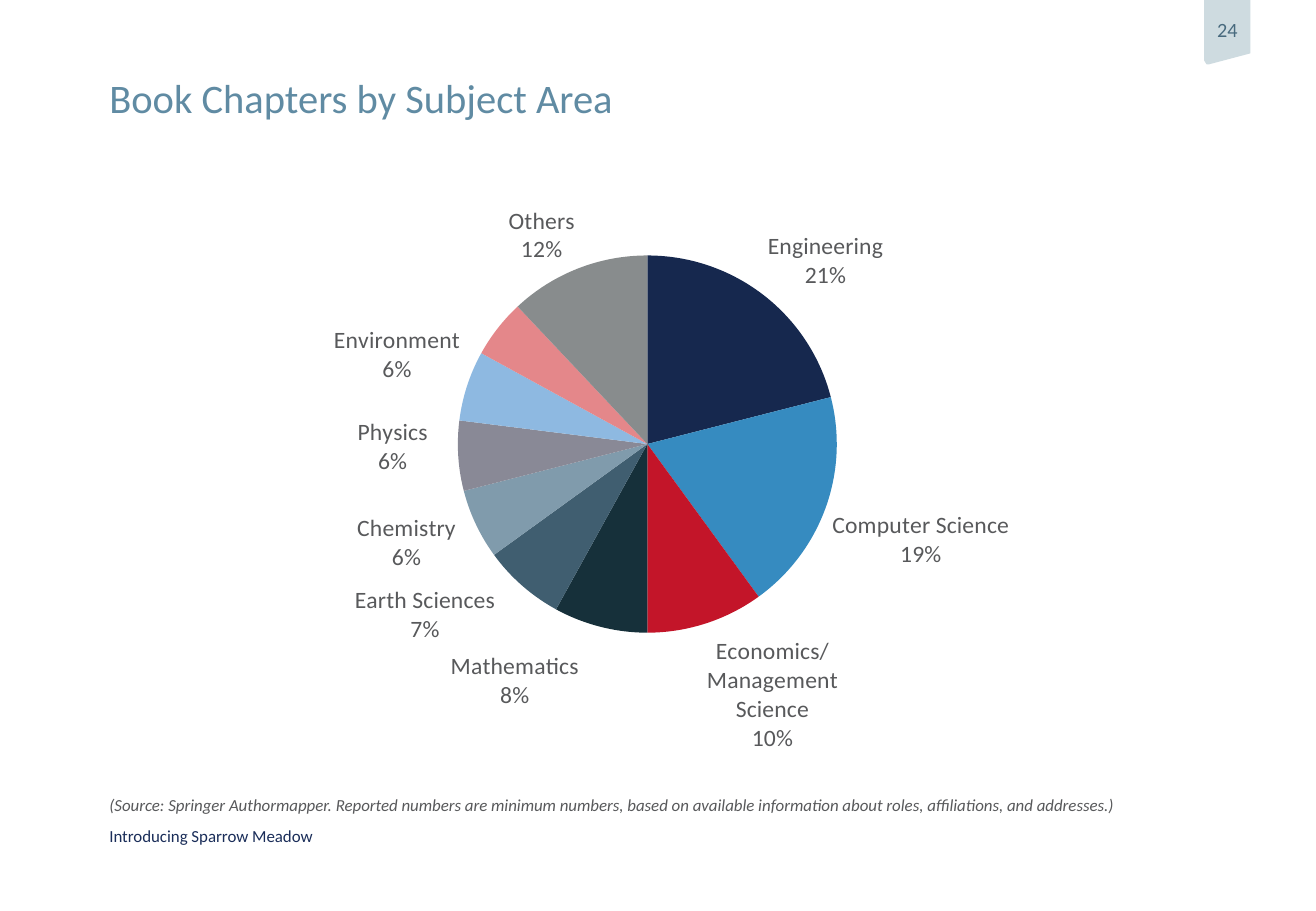
from dataclasses import dataclass

from lxml import etree
from pptx import Presentation
from pptx import util as u
from pptx.chart.chart import Chart
from pptx.chart.data import CategoryChartData
from pptx.dml.color import RGBColor
from pptx.enum import chart as chart_enum
from pptx.enum import text
from pptx.oxml import parse_xml
from pptx.oxml.ns import nsdecls
from pptx.shapes.autoshape import Shape
from pptx.slide import Slide

PX = u.Inches(1) // 100
FONT = "Calibri"
NAVY = RGBColor(0x1A, 0x2D, 0x59)
TITLE_BLUE = RGBColor(0x60, 0x8B, 0xA3)
TAB_BLUE = RGBColor(0xCE, 0xDB, 0xE0)
SLATE = RGBColor(0x48, 0x6A, 0x7E)
GREY = RGBColor(0x58, 0x59, 0x5B)


@dataclass(frozen=True)
class Box:
    left: int
    top: int
    width: int
    height: int

    def emu(self) -> tuple[int, int, int, int]:
        return self.left * PX, self.top * PX, self.width * PX, self.height * PX


@dataclass(frozen=True)
class TextStyle:
    size: int
    color: RGBColor
    italic: bool = False
    wrap: bool = True
    anchor: text.MSO_ANCHOR = text.MSO_ANCHOR.TOP
    align: text.PP_ALIGN = text.PP_ALIGN.LEFT
    bottom_inset: int = 0


@dataclass(frozen=True)
class Subject:
    name: str
    percent: int
    color: RGBColor
    label_shift: tuple[int, int] | None = None


SUBJECTS = [
    Subject("Engineering", 21, RGBColor(0x16, 0x28, 0x4E)),
    Subject("Computer Science", 19, RGBColor(0x36, 0x8B, 0xC0)),
    Subject("Economics/Management Science", 10, RGBColor(0xC3, 0x15, 0x29), (-1, 7)),
    Subject("Mathematics", 8, RGBColor(0x16, 0x30, 0x3A), (-16, 15)),
    Subject("Earth Sciences", 7, RGBColor(0x40, 0x5E, 0x70), (-18, -4)),
    Subject("Chemistry", 6, RGBColor(0x80, 0x9B, 0xAC), (-11, -11)),
    Subject("Physics", 6, RGBColor(0x89, 0x89, 0x96), (-19, -8)),
    Subject("Environment", 6, RGBColor(0x8E, 0xB9, 0xE1)),
    Subject("", 5, RGBColor(0xE4, 0x87, 0x8A)),
    Subject("Others", 12, RGBColor(0x88, 0x8C, 0x8D)),
]
CHART_BOX = Box(155, 168, 779, 452)
TAB_OUTLINE = [(1029, 0), (1029, 44), (995, 53), (993, 53), (991, 50)]


def write_text(shape: Shape, wording: str, style: TextStyle) -> None:
    frame = shape.text_frame
    frame.text = wording
    frame.auto_size = text.MSO_AUTO_SIZE.NONE
    frame.word_wrap = style.wrap
    frame.vertical_anchor = style.anchor
    frame.margin_left = frame.margin_right = frame.margin_top = 0
    frame.margin_bottom = style.bottom_inset * PX
    paragraph = frame.paragraphs[0]
    paragraph.alignment = style.align
    font = paragraph.runs[0].font
    font.name = FONT
    font.size = u.Pt(style.size)
    font.italic = style.italic
    font.color.rgb = style.color


def add_text(slide: Slide, box: Box, wording: str, style: TextStyle) -> None:
    write_text(slide.shapes.add_textbox(*box.emu()), wording, style)


def set_title(slide: Slide, box: Box, wording: str, style: TextStyle) -> None:
    title = slide.shapes.title
    title.left, title.top, title.width, title.height = box.emu()
    write_text(title, wording, style)


def add_page_tab(slide: Slide, number: str) -> None:
    builder = slide.shapes.build_freeform(991, 0, scale=PX)
    builder.add_line_segments(TAB_OUTLINE, close=True)
    tab = builder.convert_to_shape()
    tab.shadow.inherit = False
    tab.fill.solid()
    tab.fill.fore_color.rgb = TAB_BLUE
    tab.line.fill.background()
    write_text(tab, number, TextStyle(12, SLATE, wrap=False, anchor=text.MSO_ANCHOR.MIDDLE,
                                      align=text.PP_ALIGN.CENTER, bottom_inset=4))


def label_element(index: int, subject: Subject) -> etree._Element:
    if subject.label_shift:
        x, y = subject.label_shift
        content = (
            f'<c:layout><c:manualLayout><c:x val="{x / CHART_BOX.width:.4f}"/>'
            f'<c:y val="{y / CHART_BOX.height:.4f}"/></c:manualLayout></c:layout>'
            '<c:dLblPos val="outEnd"/><c:showLegendKey val="0"/><c:showVal val="0"/>'
            '<c:showCatName val="1"/><c:showSerName val="0"/><c:showPercent val="1"/>'
            '<c:showBubbleSize val="0"/><c:separator>\n</c:separator>'
        )
    else:
        content = '<c:delete val="1"/>'
    return parse_xml(f'<c:dLbl {nsdecls("c")}><c:idx val="{index}"/>{content}</c:dLbl>')


def place_plot(chart: Chart) -> None:
    plot_area = chart.element.chart.plotArea
    for layout in plot_area.findall("{*}layout"):
        plot_area.remove(layout)
    plot_area.insert(0, parse_xml(
        f'<c:layout {nsdecls("c")}><c:manualLayout><c:layoutTarget val="inner"/>'
        '<c:xMode val="edge"/><c:yMode val="edge"/><c:x val="0.2"/><c:y val="0.09"/>'
        '<c:w val="0.57"/><c:h val="0.69"/></c:manualLayout></c:layout>'
    ))


def adjust_labels(labels_element: etree._Element) -> None:
    for leader_lines in labels_element.findall("{*}showLeaderLines"):
        labels_element.remove(leader_lines)
    bubble_size = labels_element.find("{*}showBubbleSize")
    bubble_size.addnext(parse_xml(f'<c:showLeaderLines {nsdecls("c")} val="0"/>'))
    bubble_size.addnext(parse_xml(f'<c:separator {nsdecls("c")}>\n</c:separator>'))
    special = [(i, s) for i, s in enumerate(SUBJECTS) if s.label_shift or not s.name]
    for position, (index, subject) in enumerate(special):
        labels_element.insert(position, label_element(index, subject))


def add_subject_pie(slide: Slide) -> None:
    data = CategoryChartData()
    data.categories = [subject.name for subject in SUBJECTS]
    data.add_series("Series 1", [subject.percent for subject in SUBJECTS])
    chart = slide.shapes.add_chart(chart_enum.XL_CHART_TYPE.PIE, *CHART_BOX.emu(), data).chart
    chart.has_title = False
    chart.has_legend = False
    chart.font.name = FONT
    chart.font.size = u.Pt(14)
    chart.font.color.rgb = GREY
    place_plot(chart)
    plot = chart.plots[0]
    plot.vary_by_categories = True
    series = plot.series[0]
    labels = series.data_labels
    labels.show_value = False
    labels.show_category_name = True
    labels.show_percentage = True
    labels.number_format = "0%"
    labels.number_format_is_linked = False
    labels.position = chart_enum.XL_LABEL_POSITION.OUTSIDE_END
    labels.font.name = FONT
    labels.font.size = u.Pt(14)
    labels.font.color.rgb = GREY
    adjust_labels(series._element.find("{*}dLbls"))
    for index, subject in enumerate(SUBJECTS):
        slice_format = series.points[index].format
        slice_format.fill.solid()
        slice_format.fill.fore_color.rgb = subject.color
        slice_format.line.fill.background()


def main() -> None:
    presentation = Presentation()
    presentation.slide_width = 1083 * PX
    presentation.slide_height = 750 * PX
    slide = presentation.slides.add_slide(presentation.slide_layouts.get_by_name("Title Only"))
    add_text(slide, Box(90, 680, 384, 17), "Introducing Sparrow Meadow",
             TextStyle(10, NAVY, anchor=text.MSO_ANCHOR.MIDDLE))
    add_page_tab(slide, "24")
    set_title(slide, Box(90, 60, 939, 33), "Book Chapters by Subject Area", TextStyle(24, TITLE_BLUE))
    add_subject_pie(slide)
    add_text(slide, Box(90, 654, 902, 20),
             "(Source: Springer Authormapper. Reported numbers are minimum numbers, based on "
             "available information about roles, affiliations, and addresses.)",
             TextStyle(10, GREY, italic=True, wrap=False))
    presentation.save("out.pptx")


if __name__ == "__main__":
    main()
